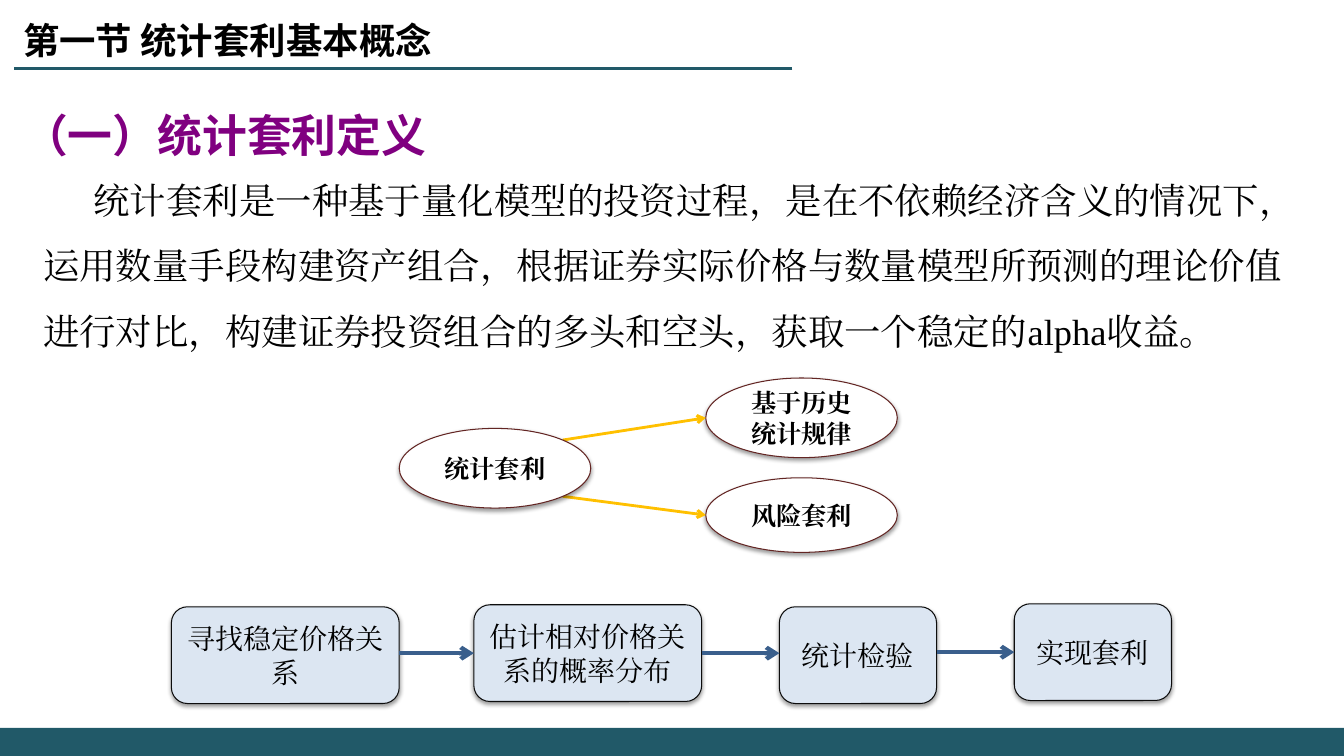
from dataclasses import dataclass
from itertools import pairwise

from lxml.etree import SubElement
from pptx import Presentation
from pptx.dml.color import RGBColor
from pptx.enum.shapes import MSO_CONNECTOR, MSO_SHAPE
from pptx.enum.text import MSO_ANCHOR, PP_ALIGN
from pptx.oxml.ns import qn
from pptx.util import Inches, Pt


@dataclass(frozen=True)
class Theme:
    teal: str = "215968"
    purple: str = "800080"
    black: str = "000000"
    white: str = "FFFFFF"
    step_fill: str = "DCE6F2"
    step_line: str = "0D0D0D"
    step_arrow: str = "3A5F8C"
    oval_line: str = "632523"
    oval_arrow: str = "FFC000"
    sans: str = "Noto Sans CJK SC"
    serif: str = "Times New Roman"
    title_size: int = 32
    body_size: int = 26
    step_size: int = 20
    oval_size: int = 18


THEME = Theme()
WIDTH, HEIGHT = 13.33, 7.5


def color(value):
    return RGBColor.from_string(value)


def write(text_frame, text, font, size, ink=THEME.black, bold=False):
    text_frame.word_wrap = True
    text_frame.text = text
    paragraph = text_frame.paragraphs[0]
    for run in paragraph.runs:
        run.font.size, run.font.bold = Pt(size), bold
        run.font.color.rgb = color(ink)
        run.font.name = font
        SubElement(run.font._element, qn("a:ea"), typeface=font)
    return paragraph


def add_text(slide, box, text, *style, anchor=MSO_ANCHOR.TOP, **options):
    text_frame = slide.shapes.add_textbox(*map(Inches, box)).text_frame
    text_frame.vertical_anchor = anchor
    return write(text_frame, text, *style, **options)


def add_node(slide, kind, box, text, fill, outline, size, bold=False):
    shape = slide.shapes.add_shape(kind, *map(Inches, box))
    shape.fill.solid()
    shape.fill.fore_color.rgb = color(fill)
    shape.line.color.rgb = color(outline)
    shape.line.width = Pt(0.75)
    # Soft shadow straight below the node
    shape.shadow.inherit = False
    effects = shape._element.spPr.find(qn("a:effectLst"))
    shadow = SubElement(effects, qn("a:outerShdw"), blurRad=str(Pt(3.1)),
                        dist=str(Pt(1.6)), dir="5400000", rotWithShape="0")
    ink = SubElement(shadow, qn("a:srgbClr"), val=THEME.black)
    SubElement(ink, qn("a:alpha"), val="38000")
    shape.text_frame.vertical_anchor = MSO_ANCHOR.MIDDLE
    paragraph = write(shape.text_frame, text, THEME.serif, size, bold=bold)
    paragraph.alignment = PP_ALIGN.CENTER


def add_line(slide, start, end, ink, width, arrow=False):
    connector = slide.shapes.add_connector(
        MSO_CONNECTOR.STRAIGHT, *map(Inches, (*start, *end)))
    connector.line.color.rgb = color(ink)
    connector.line.width = Pt(width)
    if arrow:
        SubElement(connector.line._get_or_add_ln(), qn("a:tailEnd"), type="arrow")
    SubElement(connector._element.spPr, qn("a:effectLst"))


def add_frame(slide, footer_height):
    """Footer band and rule under the section name."""
    band = slide.shapes.add_shape(
        MSO_SHAPE.RECTANGLE, 0, Inches(HEIGHT - footer_height),
        Inches(WIDTH), Inches(footer_height))
    band.shadow.inherit = False
    band.fill.solid()
    band.fill.fore_color.rgb = color(THEME.teal)
    band.line.fill.background()
    add_line(slide, (7.86, 0.68), (0.14, 0.68), THEME.teal, 1.5)


def add_headings(slide, left, top):
    add_text(slide, (left, top, 6.11, 0.54), "第一节 统计套利基本概念",
             THEME.sans, THEME.body_size, bold=True)
    add_text(slide, (left, top + 0.55, 8.19, 0.97), "（一）统计套利定义",
             THEME.sans, THEME.title_size, THEME.purple, bold=True,
             anchor=MSO_ANCHOR.BOTTOM)


def add_definition(slide, box):
    paragraph = add_text(
        slide, box,
        "统计套利是一种基于量化模型的投资过程，是在不依赖经济含义的情况下，"
        "运用数量手段构建资产组合，根据证券实际价格与数量模型所预测的理论价值"
        "进行对比，构建证券投资组合的多头和空头，获取一个稳定的alpha收益。",
        THEME.serif, THEME.body_size)
    paragraph.line_spacing = 1.5
    paragraph._p.get_or_add_pPr().set("indent", str(Inches(0.5)))


def add_branches(slide, left, top):
    """One oval that splits into two kinds of arbitrage."""
    width, height, low_height = 1.9, 0.79, 0.74
    style = THEME.white, THEME.oval_line, THEME.oval_size, True
    root_top, branch_left = top + 0.5, left + 3.04
    # Arrows leave the root at 45 degrees on its outline
    reach = 0.5 ** 0.5 / 2
    root_x, root_y = left + width / 2, root_top + height / 2
    branches = [("基于历史统计规律", top, height, -1),
                ("风险套利", top + 0.99, low_height, 1)]
    for text, y, tall, side in branches:
        add_node(slide, MSO_SHAPE.OVAL, (branch_left, y, width, tall), text, *style)
        start = root_x + width * reach, root_y + side * height * reach
        add_line(slide, start, (branch_left, y + tall / 2),
                 THEME.oval_arrow, 2, arrow=True)
    add_node(slide, MSO_SHAPE.OVAL, (left, root_top, width, height),
             "统计套利", *style)


def add_process(slide, left, top):
    """Row of four steps joined by arrows."""
    wide, narrow, height = 2.26, 1.56, 0.96
    steps = [("寻找稳定价格关系", 0, 0.03, wide),
             ("估计相对价格关系的概率分布", 3, 0.01, wide),
             ("统计检验", 6.03, 0.03, narrow),
             ("实现套利", 8.36, 0, narrow)]
    for text, x, y, width in steps:
        add_node(slide, MSO_SHAPE.ROUNDED_RECTANGLE,
                 (left + x, top + y, width, height), text,
                 THEME.step_fill, THEME.step_line, THEME.step_size)
    for (_, x, y, width), (_, next_x, next_y, _) in pairwise(steps):
        level = top + min(y, next_y) + height / 2
        add_line(slide, (left + x + width, level), (left + next_x, level),
                 THEME.step_arrow, 3, arrow=True)


def main():
    presentation = Presentation()
    presentation.slide_width = Inches(WIDTH)
    presentation.slide_height = Inches(HEIGHT)
    slide = presentation.slides.add_slide(presentation.slide_layouts[6])
    add_frame(slide, footer_height=0.28)
    add_definition(slide, (0.33, 1.5, 12.76, 2.1))
    add_process(slide, 1.7, 5.99)
    add_branches(slide, 3.96, 3.75)
    add_headings(slide, 0.13, 0.13)
    presentation.save("out.pptx")


if __name__ == "__main__":
    main()
